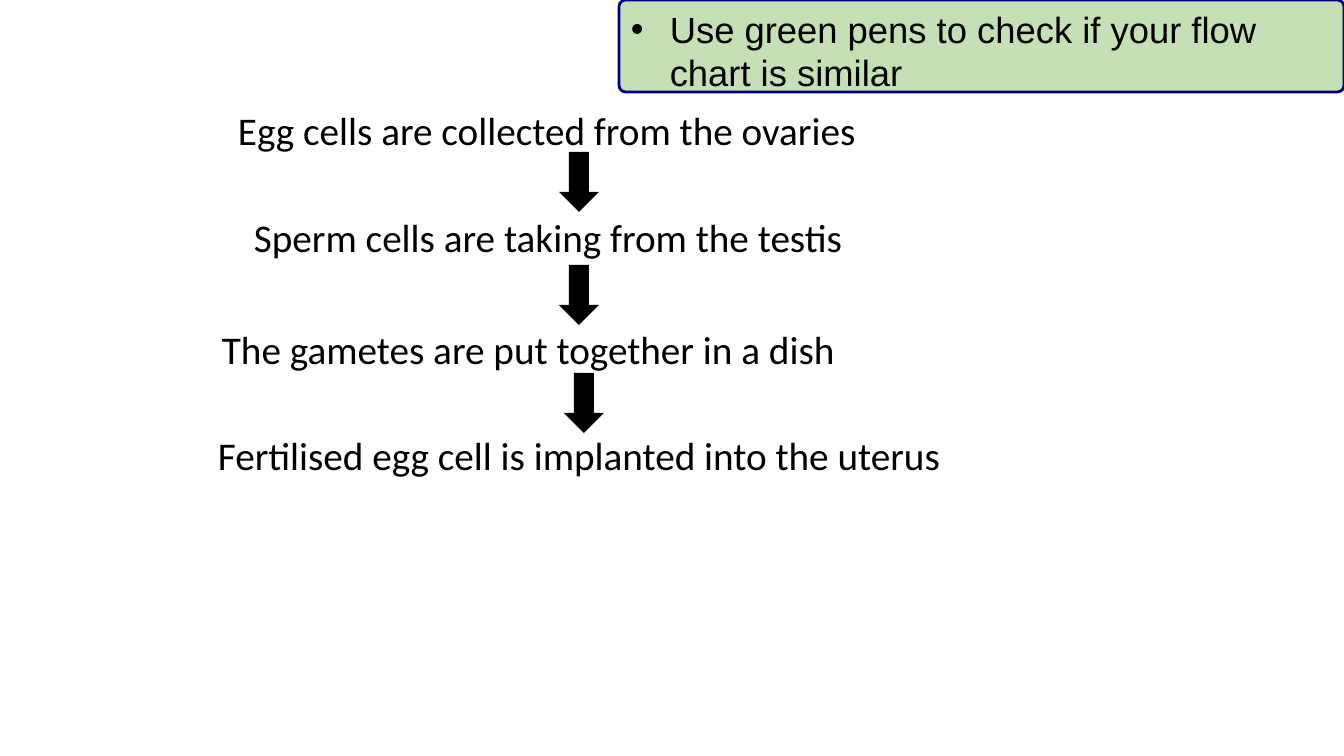
import pptx
import pptx.util
import pptx.dml.color
import pptx.enum.shapes
import pptx.enum.text
import pptx.oxml.ns
import lxml.etree

PX_PER_INCH = 100.8
BLACK = pptx.dml.color.RGBColor(0x00, 0x00, 0x00)
NAVY = pptx.dml.color.RGBColor(0x00, 0x00, 0x80)
PALE_GREEN = pptx.dml.color.RGBColor(0xC5, 0xE0, 0xB4)
SHAPE = pptx.enum.shapes.MSO_SHAPE

STEPS = [
    ("Egg cells are collected from the ovaries", 20, 0),
    ("Sperm cells are taking from the testis", 36, 107),
    ("The gametes are put together in a dish", 4, 219),
    ("Fertilised egg cell is implanted into the uterus", 0, 325),
]
ARROWS = [(351, 45), (351, 158), (356, 266)]


def px(n):
    """Turn pixels into EMU."""
    return pptx.util.Emu(round(n * 914400 / PX_PER_INCH))


def add_shape(slide, kind, box, fill):
    """Add a filled preset shape without shadow or outline."""
    sp = slide.shapes.add_shape(kind, *map(px, box))
    sp.shadow.inherit = False
    sp.fill.solid()
    sp.fill.fore_color.rgb = fill
    sp.line.fill.background()
    return sp


def write(tf, text, font, size):
    """Write one black left-aligned paragraph and return it."""
    tf.word_wrap = True
    tf.vertical_anchor = pptx.enum.text.MSO_ANCHOR.TOP
    p = tf.paragraphs[0]
    p.text = text
    p.alignment = pptx.enum.text.PP_ALIGN.LEFT
    p.font.name = font
    p.font.size = pptx.util.Pt(size)
    p.font.color.rgb = BLACK
    return p


def add_bullet(p, indent):
    """Give a paragraph a hanging round bullet."""
    pPr = p._p.get_or_add_pPr()
    pPr.set("marL", str(px(indent)))
    pPr.set("indent", str(px(-indent)))
    font = lxml.etree.Element(pptx.oxml.ns.qn("a:buFont"), typeface="Arial")
    char = lxml.etree.Element(pptx.oxml.ns.qn("a:buChar"), char="•")
    pPr.insert(0, font)
    pPr.insert(1, char)


def add_flow_chart(slide, left, top, width):
    """Place the steps and the arrows between them."""
    for text, dx, dy in STEPS:
        sp = slide.shapes.add_textbox(*map(px, (left + dx, top + dy, width, 78)))
        p = write(sp.text_frame, text, "Calibri", 28)
        p.line_spacing = 0.9
        p.space_before = pptx.util.Pt(10)
    for dx, dy in ARROWS:
        add_shape(slide, SHAPE.DOWN_ARROW, (left + dx, top + dy, 40, 60), BLACK)


def add_instruction(slide, left, top, width, height):
    """Place the bulleted instruction in its green box."""
    box = (left, top, width, height)
    sp = add_shape(slide, SHAPE.ROUNDED_RECTANGLE, box, PALE_GREEN)
    sp.adjustments[0] = 0.07
    sp.line.color.rgb = NAVY
    sp.line.width = pptx.util.Pt(2)
    tf = sp.text_frame
    tf.margin_top = px(5)
    tf.margin_bottom = 0
    text = "Use green pens to check if your flow chart is similar"
    add_bullet(write(tf, text, "Arial", 26), 39)


def main():
    """Build the slide and save it."""
    prs = pptx.Presentation()
    prs.slide_width, prs.slide_height = px(1344), px(756)
    slide = prs.slides.add_slide(prs.slide_layouts[6])
    add_flow_chart(slide, 208, 107, 854)
    add_instruction(slide, 619, 0, 725, 92)
    prs.save("out.pptx")


if __name__ == "__main__":
    main()
